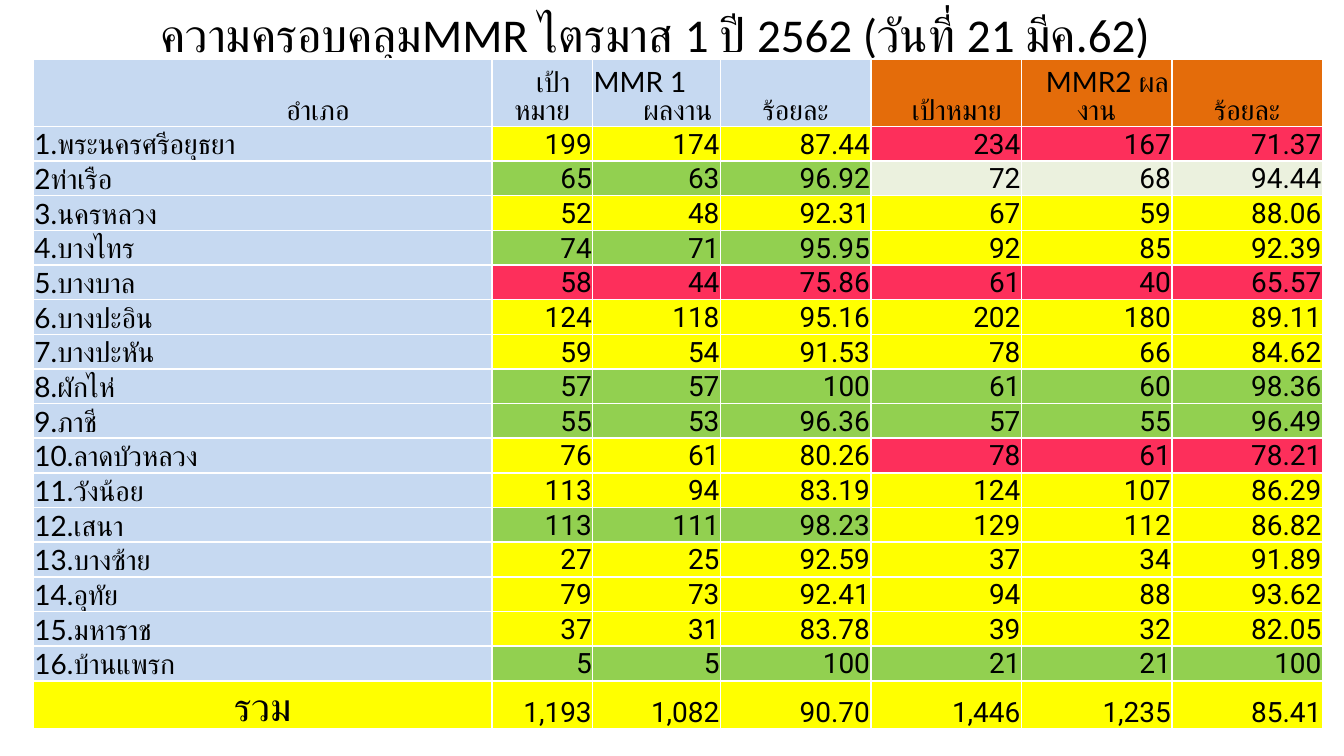
from pptx import Presentation
from pptx.dml.color import RGBColor
from pptx.enum.text import MSO_ANCHOR, PP_ALIGN as AL
from pptx.oxml import parse_xml
from pptx.oxml.ns import nsdecls
from pptx.util import Inches, Pt

THEME = {
    "text": "000000", "border": "FFFFFF", "name": "C6D9F1", "mmr2": "E46C0A",
    "green": "92D050", "yellow": "FFFF00", "red": "FD2F5B", "pale": "EBF1DE",
    "title_font": "Calibri", "label_font": "Lato", "number_font": "Roboto",
    "title_size": 25.2, "size": 15, "total_size": 21,
}

# Header cells: fill, text, alignment, left margin and first-line indent in inches
HEADERS = [
    ("name", "อำเภอ", AL.CENTER, 0, 0.82),
    ("name", "เป้าหมาย", AL.CENTER, 0, 0.16),
    ("name", "MMR 1 ผลงาน", AL.LEFT, 0.37, -0.37),
    ("name", "ร้อยละ", AL.CENTER, 0, 0),
    ("mmr2", "เป้าหมาย", AL.CENTER, 0, 0.16),
    ("mmr2", "MMR2 ผลงาน", AL.CENTER, 0, 0.16),
    ("mmr2", "ร้อยละ", AL.CENTER, 0, 0),
]

# District, MMR1 fill and figures, MMR2 fill and figures
DISTRICTS = [
    ("1.พระนครศรีอยุธยา", "yellow", "199 174 87.44", "red", "234 167 71.37"),
    ("2ท่าเรือ", "green", "65 63 96.92", "pale", "72 68 94.44"),
    ("3.นครหลวง", "yellow", "52 48 92.31", "yellow", "67 59 88.06"),
    ("4.บางไทร", "green", "74 71 95.95", "yellow", "92 85 92.39"),
    ("5.บางบาล", "red", "58 44 75.86", "red", "61 40 65.57"),
    ("6.บางปะอิน", "yellow", "124 118 95.16", "yellow", "202 180 89.11"),
    ("7.บางปะหัน", "yellow", "59 54 91.53", "yellow", "78 66 84.62"),
    ("8.ผักไห่", "green", "57 57 100", "green", "61 60 98.36"),
    ("9.ภาชี", "green", "55 53 96.36", "green", "57 55 96.49"),
    ("10.ลาดบัวหลวง", "yellow", "76 61 80.26", "red", "78 61 78.21"),
    ("11.วังน้อย", "yellow", "113 94 83.19", "yellow", "124 107 86.29"),
    ("12.เสนา", "green", "113 111 98.23", "yellow", "129 112 86.82"),
    ("13.บางซ้าย", "yellow", "27 25 92.59", "yellow", "37 34 91.89"),
    ("14.อุทัย", "yellow", "79 73 92.41", "yellow", "94 88 93.62"),
    ("15.มหาราช", "yellow", "37 31 83.78", "yellow", "39 32 82.05"),
    ("16.บ้านแพรก", "green", "5 5 100", "green", "21 21 100"),
]
TOTAL = ("รวม", "yellow", "1,193 1,082 90.70", "yellow", "1,446 1,235 85.41")

COL_WIDTHS = [3.41, 0.75, 0.95] + [1.12] * 4
ROW_HEIGHTS = [0.5] + [4.13 / len(DISTRICTS)] * len(DISTRICTS) + [0.36]


def style_text(p, font, size, align):
    p.alignment = align
    for r in p.runs:
        r.font.name, r.font.size = font, Pt(size)
        r.font.color.rgb = RGBColor.from_string(THEME["text"])


def fill_cell(cell, text, align, fill, font, size=THEME["size"]):
    """Write the text and set insets, borders and fill."""
    cell.text = text
    style_text(cell.text_frame.paragraphs[0], font, size, align)
    cell.vertical_anchor = MSO_ANCHOR.BOTTOM
    cell.margin_left = cell.margin_right = cell.margin_top = Pt(0.5)
    cell.margin_bottom = 0
    tc_pr = cell._tc.get_or_add_tcPr()
    for side in ("lnL", "lnR", "lnT", "lnB"):
        tc_pr.append(parse_xml(
            f'<a:{side} {nsdecls("a")} w="{Pt(1)}"><a:solidFill>'
            f'<a:srgbClr val="{THEME["border"]}"/></a:solidFill></a:{side}>'))
    cell.fill.solid()
    cell.fill.fore_color.rgb = RGBColor.from_string(THEME[fill])


prs = Presentation()
prs.slide_width, prs.slide_height = Inches(10), Inches(10 * 9 / 16)
s = prs.slides.add_slide(prs.slide_layouts[5])

title = s.shapes.title
title.left, title.top = Inches(0.5), Inches(0)
title.width, title.height = Inches(8.75), Inches(0.5)
tf = title.text_frame
tf.text = "ความครอบคลุมMMR ไตรมาส 1 ปี 2562 (วันที่ 21 มีค.62)"
tf.vertical_anchor = MSO_ANCHOR.MIDDLE
style_text(tf.paragraphs[0], THEME["title_font"], THEME["title_size"], AL.CENTER)

table = s.shapes.add_table(
    len(ROW_HEIGHTS), len(COL_WIDTHS), Inches(0.25), Inches(0.44),
    Inches(sum(COL_WIDTHS)), Inches(sum(ROW_HEIGHTS))).table
table.first_row = table.horz_banding = False
for column, width in zip(table.columns, COL_WIDTHS):
    column.width = Inches(width)
for row, height in zip(table.rows, ROW_HEIGHTS):
    row.height = Inches(height)

for col, (fill, text, align, margin, indent) in enumerate(HEADERS):
    cell = table.cell(0, col)
    fill_cell(cell, text, align, fill, THEME["label_font"])
    p_pr = cell.text_frame.paragraphs[0]._p.get_or_add_pPr()
    p_pr.set("marL", str(Inches(margin)))
    p_pr.set("indent", str(Inches(indent)))

for row, (name, fill1, mmr1, fill2, mmr2) in enumerate(DISTRICTS + [TOTAL], start=1):
    if name == TOTAL[0]:
        fill_cell(table.cell(row, 0), name, AL.CENTER, "yellow",
                  THEME["label_font"], THEME["total_size"])
    else:
        fill_cell(table.cell(row, 0), name, AL.LEFT, "name", THEME["label_font"])
    for first_col, fill, figures in ((1, fill1, mmr1), (4, fill2, mmr2)):
        for col, figure in enumerate(figures.split(), start=first_col):
            fill_cell(table.cell(row, col), figure, AL.RIGHT, fill, THEME["number_font"])

prs.save("out.pptx")
